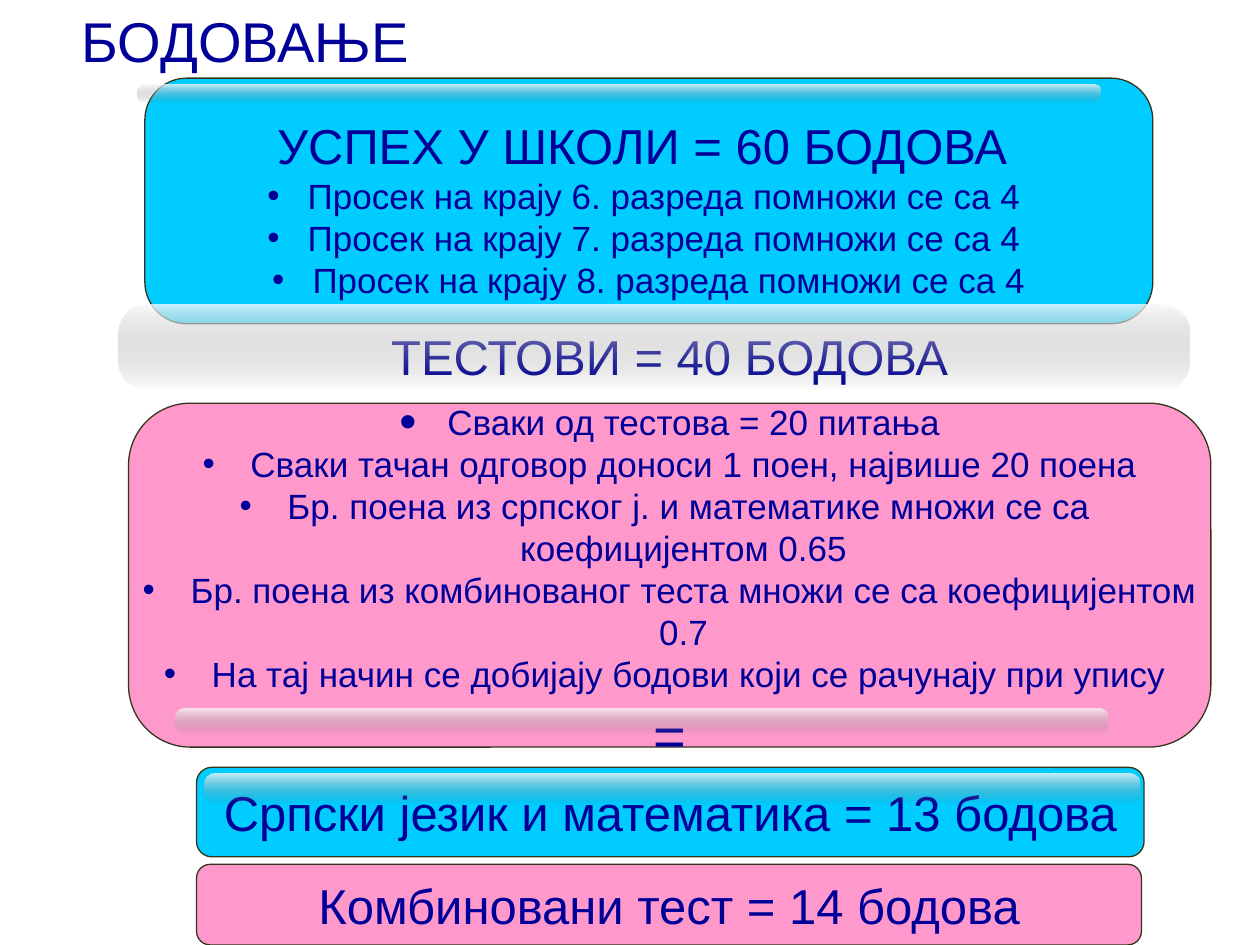
from dataclasses import dataclass

from lxml import etree
from pptx import Presentation
from pptx.dml.color import RGBColor
from pptx.enum import shapes, text
from pptx.oxml.ns import qn
from pptx.util import Inches, Pt


@dataclass(frozen=True)
class Theme:
    font: str = "Arial"
    ink: str = "000099"
    border: str = "34341A"
    blue: str = "00CCFF"
    pink: str = "FF99CC"
    gloss: tuple = (("F8F8F8", 80), ("727272", 0))
    title: int = 32
    heading: int = 28
    body: int = 20
    body_line: int = 24


def rgb(value):
    return RGBColor.from_string(value)


def write(frame, theme, content, first=False, size=None, bullet=False, bullet_scale=100,
          hang=0.0, left=0.0, line=None, before=0, align=text.PP_ALIGN.CENTER):
    """Add one formatted paragraph; hang and left are indents in inches."""
    paragraph = frame.paragraphs[0] if first else frame.add_paragraph()
    props = paragraph._p.get_or_add_pPr()
    props.set("marL", str(Inches(hang or left)))
    props.set("indent", str(-Inches(hang)))
    if bullet:
        etree.SubElement(props, qn("a:buSzPct")).set("val", str(bullet_scale * 1000))
        etree.SubElement(props, qn("a:buFont")).set("typeface", theme.font)
        etree.SubElement(props, qn("a:buChar")).set("char", "•")
    paragraph.alignment = align
    if line:
        paragraph.line_spacing = Pt(line)
    if before:
        paragraph.space_before = Pt(before)
    run = paragraph.add_run()
    run.text = content
    run.font.name = theme.font
    run.font.size = Pt(size or theme.heading)
    run.font.color.rgb = rgb(theme.ink)


class ScoreSlide:
    def __init__(self, slide, theme):
        self.slide = slide
        self.theme = theme

    def _rounded(self, box, corner):
        shape = self.slide.shapes.add_shape(
            shapes.MSO_SHAPE.ROUNDED_RECTANGLE, *map(Inches, box))
        shape.adjustments[0] = corner
        shape.shadow.inherit = False
        return shape

    def title(self, content, box):
        frame = self.slide.shapes.add_textbox(*map(Inches, box)).text_frame
        frame.word_wrap = True
        frame.vertical_anchor = text.MSO_ANCHOR.MIDDLE
        write(frame, self.theme, content, first=True, size=self.theme.title,
              align=text.PP_ALIGN.LEFT)

    def panel(self, box, color, heading, corner=0.17, top=0.05, bottom=0.05,
              anchor=text.MSO_ANCHOR.MIDDLE):
        shape = self._rounded(box, corner)
        shape.fill.solid()
        shape.fill.fore_color.rgb = rgb(color)
        shape.line.color.rgb = rgb(self.theme.border)
        shape.line.width = Pt(0.75)
        frame = shape.text_frame
        frame.word_wrap = False
        frame.vertical_anchor = anchor
        frame.margin_top, frame.margin_bottom = Inches(top), Inches(bottom)
        write(frame, self.theme, heading, first=True)
        return frame

    def body(self, frame, content, **style):
        style = {"size": self.theme.body, "line": self.theme.body_line, **style}
        write(frame, self.theme, content, **style)

    def gloss(self, box):
        """Lay a fading highlight over what is already drawn."""
        shape = self._rounded(box, 0.32)
        shape.line.fill.background()
        shape.fill.gradient()
        shape.fill.gradient_angle = 270
        for stop, (color, opacity) in zip(shape.fill.gradient_stops, self.theme.gloss):
            stop.color.rgb = rgb(color)
        stops = shape._element.spPr.findall(".//" + qn("a:gs"))
        for stop, (color, opacity) in zip(stops, self.theme.gloss):
            etree.SubElement(stop[0], qn("a:alpha")).set("val", str(opacity * 1000))


def main():
    deck = Presentation()
    deck.slide_width, deck.slide_height = Inches(10), Inches(7.5)
    theme = Theme()
    page = ScoreSlide(deck.slides.add_slide(deck.slide_layouts[6]), theme)

    page.title("БОДОВАЊЕ", (0.55, 0, 9, 0.64))

    school = page.panel((1.15, 0.62, 8, 1.95), theme.blue, "УСПЕХ У ШКОЛИ = 60 БОДОВА ",
                        top=0.2, anchor=text.MSO_ANCHOR.TOP)
    for grade, ending in ((6, " "), (7, " "), (8, "")):
        page.body(school, f"Просек на крају {grade}. разреда помножи се са 4{ending}",
                  bullet=True, hang=0.32)
    page.gloss((1.09, 0.67, 7.64, 0.14))

    tests = page.panel((1.02, 3.2, 8.59, 2.73), theme.pink, "ТЕСТОВИ = 40 БОДОВА",
                       corner=0.18, bottom=0.5)
    point = {"bullet": True, "hang": 0.38}
    continuation = {"left": 0.22}
    page.body(tests, "Сваки од тестова = 20 питања", bullet_scale=140, line=33, **point)
    for content, style in (
        ("Сваки тачан одговор доноси 1 поен, највише 20 поена", point),
        ("Бр. поена из српског ј. и математике множи се са ", point),
        ("коефицијентом 0.65", continuation),
        ("Бр. поена из комбинованог теста множи се са коефицијентом", point),
        ("0.7", continuation),
        ("На тај начин се добијају бодови који се рачунају при упису ", point),
    ):
        page.body(tests, content, **style)
    write(tests, theme, "=", size=theme.title, before=3)
    page.gloss((0.94, 2.42, 8.5, 0.67))

    page.panel((1.56, 6.09, 7.52, 0.71), theme.blue, "Српски језик и математика = 13 бодова")
    page.gloss((1.62, 6.14, 7.42, 0.24))

    page.panel((1.56, 6.86, 7.5, 0.64), theme.pink, "Комбиновани тест = 14 бодова")
    page.gloss((1.39, 5.62, 7.4, 0.21))

    deck.save("out.pptx")


if __name__ == "__main__":
    main()
